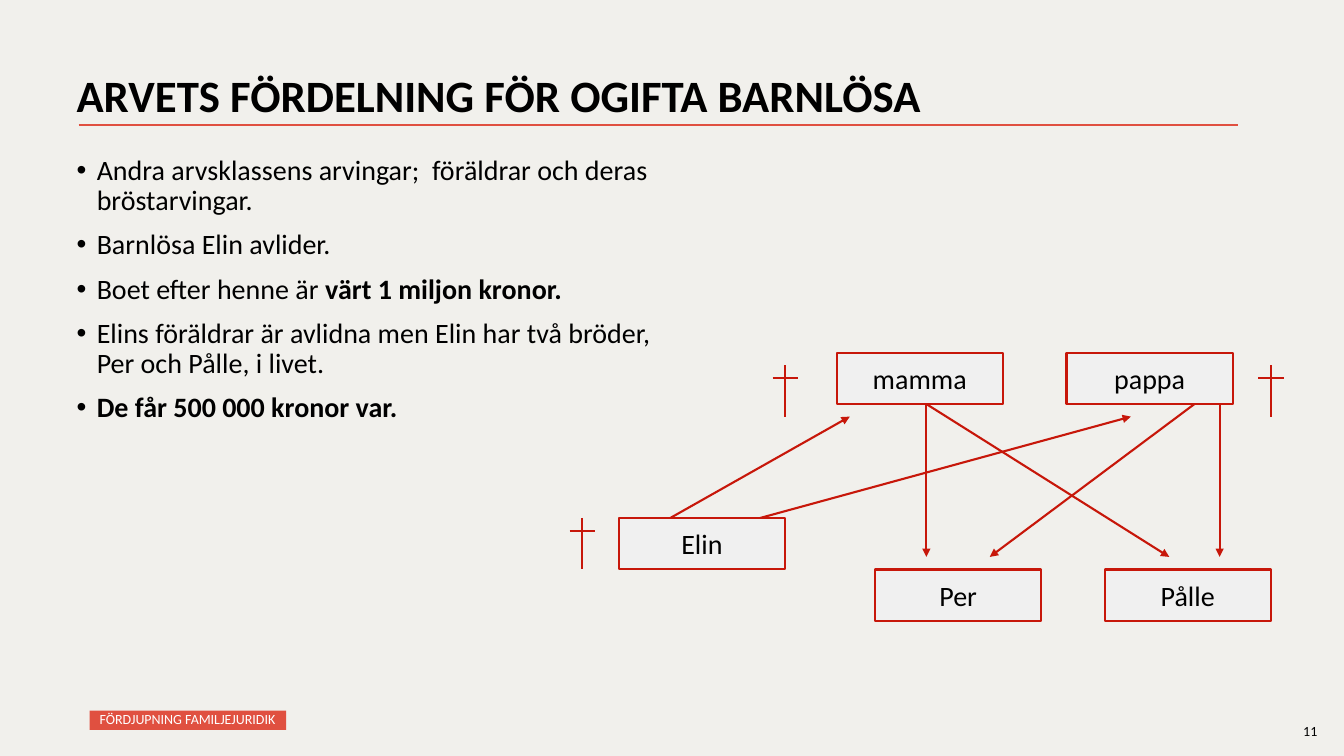
from lxml import etree
from pptx import Presentation
from pptx.dml.color import RGBColor
from pptx.enum.shapes import MSO_CONNECTOR, MSO_SHAPE
from pptx.enum.text import MSO_ANCHOR, MSO_AUTO_SIZE, PP_ALIGN
from pptx.oxml.ns import qn
from pptx.util import Pt

RECT, STRAIGHT = MSO_SHAPE.RECTANGLE, MSO_CONNECTOR.STRAIGHT
TOP, MIDDLE = MSO_ANCHOR.TOP, MSO_ANCHOR.MIDDLE
LEFT, CENTER = PP_ALIGN.LEFT, PP_ALIGN.CENTER
NO_FIT = MSO_AUTO_SIZE.NONE
BACKGROUND = RGBColor(0xF1, 0xF0, 0xEC)
BLACK = RGBColor(0, 0, 0)
WHITE = RGBColor(0xFF, 0xFF, 0xFF)
CORAL = RGBColor(0xE0, 0x50, 0x40)
RED = RGBColor(0xC7, 0x17, 0x0A)
GREY = RGBColor(0xF0, 0xF0, 0xF0)

# Content: each paragraph is a list of (text, bold) runs
TITLE = "ARVETS FÖRDELNING FÖR OGIFTA BARNLÖSA"
BULLETS = [
    [("Andra arvsklassens arvingar;  föräldrar och deras bröstarvingar.", False)],
    [("Barnlösa Elin avlider.", False)],
    [("Boet efter henne är ", False), ("värt 1 miljon kronor.", True)],
    [("Elins föräldrar är avlidna men Elin har två bröder, Per och Pålle, i livet.", False)],
    [("De får 500 000 kronor var.", True)],
]
LABEL = "FÖRDJUPNING FAMILJEJURIDIK"
PAGE = "11"

# Family tree, in points
BOX_W, BOX_H = 118.8, 36.6
PARENT_Y, ELIN_Y, BROTHER_Y = 252, 370, 406.8
PEOPLE = [("mamma", 597.6, PARENT_Y), ("pappa", 761.8, PARENT_Y),
          ("Elin", 442, ELIN_Y), ("Per", 625, BROTHER_Y), ("Pålle", 789, BROTHER_Y)]
PARENT_END = PARENT_Y + BOX_H
GAP = 9
UPWARD = [(478.8, 607), (543, 807.8)]
DOWNWARD = [(661.7, 661.7), (661.7, 835.2), (871.2, 871.2), (853.2, 707)]
ARROWS = ([(x1, ELIN_Y, x2, PARENT_END + GAP) for x1, x2 in UPWARD]
          + [(x1, PARENT_END, x2, BROTHER_Y - GAP) for x1, x2 in DOWNWARD])
CROSSES = [(561, PARENT_Y + GAP), (908, PARENT_Y + GAP), (416, ELIN_Y)]
CROSS_H, ARM = 36.6, 9.2


def write(tf, paragraphs, size=20, color=BLACK, align=LEFT, anchor=TOP, wrap=True,
          spacing=None, before=0, bullet=False, insets=(7.2, 3.6, 7.2, 3.6)):
    tf.word_wrap, tf.auto_size, tf.vertical_anchor = wrap, NO_FIT, anchor
    tf.margin_left, tf.margin_top, tf.margin_right, tf.margin_bottom = map(Pt, insets)
    for i, runs in enumerate(paragraphs):
        p = tf.paragraphs[0] if i == 0 else tf.add_paragraph()
        if bullet:
            pPr = p._p.get_or_add_pPr()
            pPr.set("marL", str(Pt(14.4)))
            pPr.set("indent", str(-Pt(14.4)))
            etree.SubElement(pPr, qn("a:buChar"), char="•")
        p.alignment = align
        p.space_before = Pt(before if i else 0)
        if spacing:
            p.line_spacing = spacing
        for text, bold in runs:
            r = p.add_run()
            r.text = text
            r.font.name, r.font.size, r.font.bold = "Calibri", Pt(size), bold
            r.font.color.rgb = color


def place(sp, *bounds):
    sp.left, sp.top, sp.width, sp.height = map(Pt, bounds)


def add_rect(x, y, w, h, fill, line=None):
    sp = s.shapes.add_shape(RECT, *map(Pt, (x, y, w, h)))
    sp.shadow.inherit = False
    sp.fill.solid()
    sp.fill.fore_color.rgb = fill
    if line is None:
        sp.line.fill.background()
    else:
        sp.line.color.rgb, sp.line.width = line, Pt(1.5)
    return sp


def add_line(x1, y1, x2, y2, color=RED, arrow=False):
    c = s.shapes.add_connector(STRAIGHT, *map(Pt, (x1, y1, x2, y2)))
    c.line.color.rgb, c.line.width = color, Pt(1.5)
    if arrow:
        etree.SubElement(c.line._get_or_add_ln(), qn("a:tailEnd"), type="triangle")
    etree.SubElement(c._element.spPr, qn("a:effectLst"))


prs = Presentation()
prs.slide_width, prs.slide_height = Pt(960), Pt(540)
s = prs.slides.add_slide(prs.slide_layouts[1])
s.background.fill.solid()
s.background.fill.fore_color.rgb = BACKGROUND

# Title and rule
place(s.shapes.title, 47.5, 49, 828, 104.4)
write(s.shapes.title.text_frame, [[(TITLE, True)]], size=32, spacing=0.9)
add_line(56.2, 89.3, 884.2, 89.3, color=CORAL)

# Bullet list
body = s.placeholders[1]
place(body, 47.5, 108, 445, 342.7)
write(body.text_frame, BULLETS, spacing=0.9, before=10, bullet=True)

# Family boxes, arrows and crosses for the deceased
for name, x, y in PEOPLE:
    box = add_rect(x, y, BOX_W, BOX_H, GREY, RED)
    write(box.text_frame, [[(name, False)]], align=CENTER, anchor=MIDDLE,
          wrap=False, insets=(3, 3, 3, 3))
for ends in ARROWS:
    add_line(*ends, arrow=True)
for x, y in CROSSES:
    add_line(x, y, x, y + CROSS_H)
    add_line(x - ARM, y + GAP, x + ARM, y + GAP)

# Footer label and page number
label = add_rect(64, 507.6, 140.4, 13.7, CORAL)
write(label.text_frame, [[(LABEL, False)]], size=10, color=WHITE, anchor=MIDDLE,
      spacing=0.9, insets=(7.2, 0, 3, 0))
page = s.shapes.add_textbox(*map(Pt, (923.8, 512.6, 28.8, 19.4)))
write(page.text_frame, [[(PAGE, False)]], size=10)

prs.save("out.pptx")
